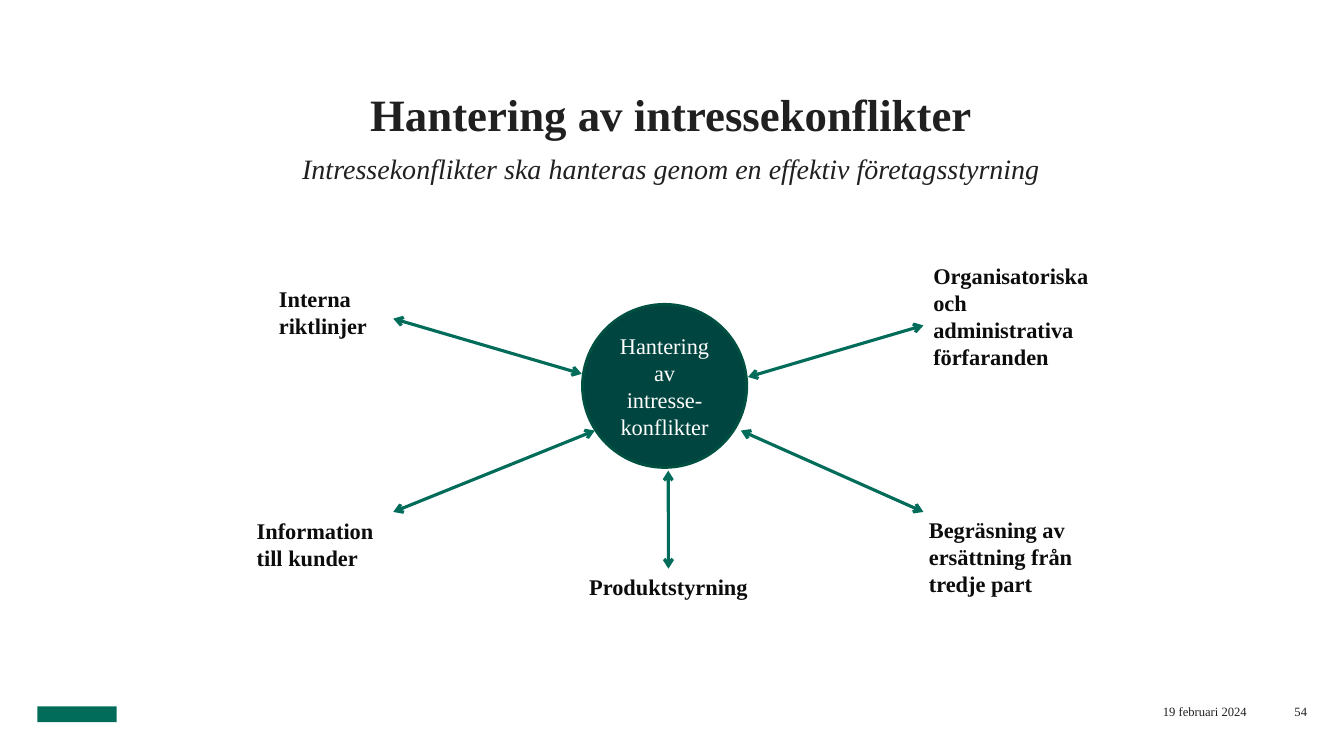
import pptx
import pptx.dml.color
import pptx.enum.shapes
import pptx.enum.text
import pptx.oxml.ns
import pptx.oxml.xmlchemy
import pptx.util

Cm, Pt = pptx.util.Cm, pptx.util.Pt
RGBColor = pptx.dml.color.RGBColor
OxmlElement = pptx.oxml.xmlchemy.OxmlElement
Shapes = pptx.enum.shapes.MSO_SHAPE
Align = pptx.enum.text.PP_ALIGN
Anchor = pptx.enum.text.MSO_ANCHOR

GREEN = RGBColor(0x00, 0x6C, 0x59)
DARK_GREEN = RGBColor(0x00, 0x45, 0x3F)
OUTLINE_GREEN = RGBColor(0x00, 0x50, 0x42)
CHARCOAL = RGBColor(0x20, 0x20, 0x20)
BLACK = RGBColor(0x0C, 0x0C, 0x0C)
WHITE = RGBColor(0xFF, 0xFF, 0xFF)
FONT = "Times New Roman"


def write_text(shape, text, size=16, color=BLACK, bold=False, italic=False,
               align=Align.LEFT, anchor=Anchor.TOP, margin=None,
               space_before=0, space_after=0):
    frame = shape.text_frame
    frame.word_wrap = True
    frame.vertical_anchor = anchor
    if margin is not None:
        frame.margin_left = frame.margin_right = Cm(margin)
        frame.margin_top = frame.margin_bottom = Cm(margin)
    paragraph = frame.paragraphs[0]
    paragraph.alignment = align
    paragraph.space_before = Pt(space_before)
    paragraph.space_after = Pt(space_after)
    run = paragraph.add_run()
    run.text = text
    run.font.name = FONT
    run.font.size = Pt(size)
    run.font.bold = bold
    run.font.italic = italic
    run.font.color.rgb = color


class SlideBuilder:
    """Holds the line style and the slide being filled."""

    line_color = GREEN
    line_width = Pt(2.25)

    def __init__(self, slide):
        self.slide = slide

    def text(self, text, box, **text_format):
        shape = self.slide.shapes.add_textbox(*map(Cm, box))
        write_text(shape, text, **text_format)
        return shape

    def shape(self, kind, box, fill, outline=None):
        shape = self.slide.shapes.add_shape(kind, *map(Cm, box))
        shape.shadow.inherit = False
        shape.fill.solid()
        shape.fill.fore_color.rgb = fill
        if outline is None:
            shape.line.fill.background()
        else:
            shape.line.color.rgb = outline
            shape.line.width = Pt(2)
        return shape

    def double_arrow(self, start, end):
        connector = self.slide.shapes.add_connector(
            pptx.enum.shapes.MSO_CONNECTOR.STRAIGHT, *map(Cm, start + end))
        connector.line.color.rgb = self.line_color
        connector.line.width = self.line_width
        properties = connector._element.find(pptx.oxml.ns.qn("p:spPr"))
        line = properties.find(pptx.oxml.ns.qn("a:ln"))
        for tag in ("a:headEnd", "a:tailEnd"):
            arrowhead = OxmlElement(tag)
            arrowhead.set("type", "arrow")
            line.append(arrowhead)
        properties.append(OxmlElement("a:effectLst"))
        return connector


def main():
    presentation = pptx.Presentation()
    presentation.slide_width = Cm(33.87)
    presentation.slide_height = Cm(19.05)
    builder = SlideBuilder(
        presentation.slides.add_slide(presentation.slide_layouts[6]))

    # Headings
    builder.text("Hantering av intressekonflikter", (4.52, 1.57, 24.79, 1.98),
                 size=32, color=CHARCOAL, bold=True, align=Align.CENTER,
                 anchor=Anchor.BOTTOM, margin=0)
    builder.text("Intressekonflikter ska hanteras genom en effektiv företagsstyrning",
                 (4.52, 3.53, 24.79, 1.4), size=20, color=CHARCOAL, italic=True,
                 align=Align.CENTER, anchor=Anchor.MIDDLE, margin=0,
                 space_before=12, space_after=6)

    # Footer with a plain brand bar
    builder.shape(Shapes.RECTANGLE, (0.94, 17.8, 2.0, 0.4), GREEN)
    for text, left, width in (("19 februari 2024", 27.23, 4.19),
                              ("54", 32.33, 0.61)):
        builder.text(text, (left, 17.75, width, 0.46), size=9, color=CHARCOAL,
                     align=Align.RIGHT, margin=0)

    # Central circle
    circle = builder.shape(Shapes.FLOWCHART_CONNECTOR, (14.68, 7.67, 4.14, 4.11),
                           DARK_GREEN, OUTLINE_GREEN)
    write_text(circle, "Hantering av intresse-konflikter", color=WHITE,
               align=Align.CENTER, anchor=Anchor.MIDDLE)

    # Surrounding measures: text, box, arrow start, arrow end
    measures = (
        ("Interna riktlinjer", (6.78, 7.06, 4.14, 1.63),
         (9.91, 8.03), (14.66, 9.42)),
        ("Information till kunder", (6.22, 12.9, 3.58, 1.63),
         (9.91, 12.9), (14.99, 10.85)),
        ("Organisatoriska och administrativa förfaranden",
         (23.27, 6.48, 4.83, 3.0), (18.85, 9.5), (23.27, 8.2)),
        ("Begräsning av ersättning från tredje part",
         (23.16, 12.88, 4.83, 2.31), (18.67, 10.85), (23.27, 12.9)),
    )
    for text, box, start, end in measures:
        builder.double_arrow(start, end)
        builder.text(text, box, bold=True)

    # Measure below the circle, joined to its arrow
    product = builder.text("Produktstyrning", (14.43, 14.33, 4.83, 0.94),
                           bold=True, align=Align.CENTER)
    arrow = builder.double_arrow((16.84, 14.33), (16.84, 11.86))
    arrow.begin_connect(product, 0)

    presentation.save("out.pptx")


if __name__ == "__main__":
    main()
